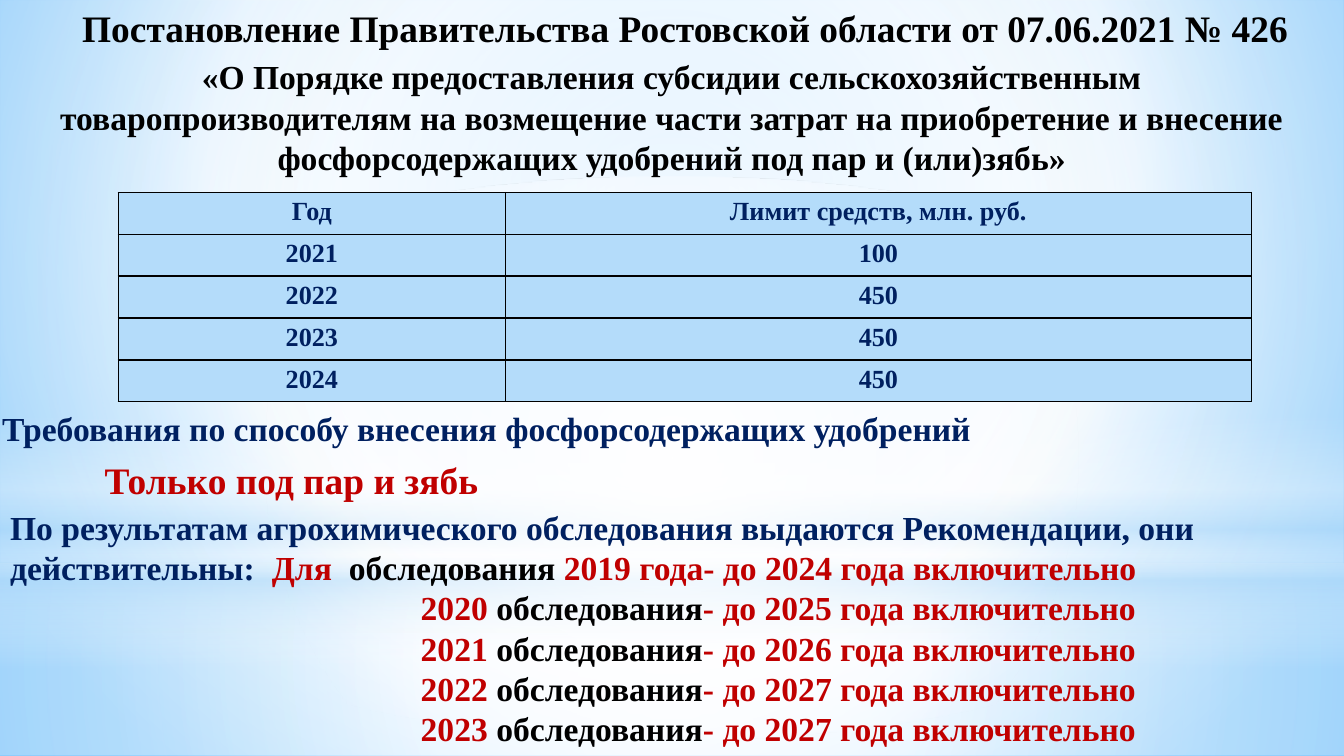
from pptx import Presentation
from pptx.dml.color import RGBColor
from pptx.enum.shapes import MSO_SHAPE as Shape
from pptx.enum.text import MSO_ANCHOR as Anchor, MSO_AUTO_SIZE as AutoSize, PP_ALIGN as Align
from pptx.oxml import parse_xml
from pptx.oxml.ns import nsdecls, qn
from pptx.util import Pt

COLORS = {"black": "000000", "navy": "002060", "red": "C00000", "white": "FFFFFF",
          "pale": "B4DCFA", "sky": "9ED5FF", "blue": "5BB9FF"}
FONT = "Times New Roman"


def paint_gradient(fill, element, stops, focus):
    fill.gradient()
    gradient = element.find(".//" + qn("a:gradFill"))
    stop_xml = "".join(
        f'<a:gs pos="{position * 1000}"><a:srgbClr val="{COLORS[color]}">'
        f'<a:alpha val="{opacity * 1000}"/></a:srgbClr></a:gs>'
        for position, color, opacity in stops)
    direction = '<a:lin ang="5400000" scaled="1"/>'
    if focus:
        left, top, right, bottom = [value * 1000 for value in focus]
        direction = (f'<a:path path="circle"><a:fillToRect l="{left}" t="{top}" '
                     f'r="{right}" b="{bottom}"/></a:path>')
    gradient.getparent().replace(gradient, parse_xml(
        f'<a:gradFill {nsdecls("a")} rotWithShape="1"><a:gsLst>{stop_xml}</a:gsLst>'
        f'{direction}</a:gradFill>'))


def add_runs(paragraph, size, runs, align=Align.LEFT):
    paragraph.alignment = align
    for text, color in runs:
        run = paragraph.add_run()
        run.text = text
        run.font.name = FONT
        run.font.size = Pt(size)
        run.font.bold = True
        run.font.color.rgb = RGBColor.from_string(COLORS[color])


presentation = Presentation()
presentation.slide_width = Pt(720)
presentation.slide_height = Pt(405)
slide = presentation.slides.add_slide(presentation.slide_layouts[5])

paint_gradient(slide.background.fill, slide.element,
               [(0, "sky", 100), (60, "white", 100), (100, "blue", 100)], (20, 10, 20, 60))

center = (50, 50, 50, 50)
panels = [
    (Shape.RECTANGLE, 302, 103, center,
     [(0, "white", 91), (37, "white", 76), (100, "pale", 79)]),
    (Shape.RECTANGLE, 0, 302, center,
     [(0, "white", 89), (48, "white", 62), (100, "pale", 79)]),
    (Shape.RECTANGLE, 222.5, 135, None,
     [(0, "white", 0), (29, "white", 30), (45, "pale", 40),
      (55, "white", 26), (65, "pale", 60), (100, "white", 0)]),
    (Shape.OVAL, 94.5, 301.5, center, [(0, "white", 100), (56, "white", 0)]),
]
for kind, top, height, focus, stops in panels:
    panel = slide.shapes.add_shape(kind, 0, Pt(top), Pt(720), Pt(height))
    panel.shadow.inherit = False
    panel.line.fill.background()
    paint_gradient(panel.fill, panel.element, stops, focus)

title = slide.shapes.title
title.element.getparent().append(title.element)
title.left, title.top, title.width, title.height = Pt(14.4), Pt(0), Pt(705.6), Pt(29.5)
subtitle = slide.shapes.add_textbox(Pt(18.9), Pt(27.4), Pt(682), Pt(70.6))

limits = [("Год", "Лимит средств, млн. руб."), ("2021", "100"), ("2022", "450"),
          ("2023", "450"), ("2024", "450")]
table = slide.shapes.add_table(len(limits), 2, Pt(63.4), Pt(103.2), Pt(607), Pt(112)).table
table.columns[0].width = Pt(207.4)
table.columns[1].width = Pt(399.6)
for row, values in zip(table.rows, limits):
    row.height = Pt(22.4)
    for cell, value in zip(row.cells, values):
        cell.margin_left = cell.margin_right = Pt(7.2)
        cell.margin_top = cell.margin_bottom = Pt(2.7)
        add_runs(cell.text_frame.paragraphs[0], 14, [(value, "navy")], Align.CENTER)
        properties = cell._tc.get_or_add_tcPr()
        for side in ("lnL", "lnR", "lnT", "lnB"):
            properties.append(parse_xml(
                f'<a:{side} {nsdecls("a")} w="12700"><a:solidFill>'
                f'<a:srgbClr val="{COLORS["black"]}"/></a:solidFill></a:{side}>'))
        cell.fill.solid()
        cell.fill.fore_color.rgb = RGBColor.from_string(COLORS["pale"])

requirement = slide.shapes.add_textbox(Pt(-4.3), Pt(216), Pt(535.7), Pt(27.4))
method = slide.shapes.add_textbox(Pt(50.6), Pt(242), Pt(213), Pt(29.5))
validity = slide.shapes.add_textbox(Pt(0), Pt(268.8), Pt(720), Pt(136))

for box in (title, subtitle, requirement, method, validity):
    frame = box.text_frame
    frame.word_wrap = box not in (requirement, method)
    frame.auto_size = AutoSize.NONE
    frame.vertical_anchor = Anchor.TOP
    frame.margin_left = frame.margin_right = Pt(5.4)
    frame.margin_top = frame.margin_bottom = Pt(2.7)

add_runs(title.text_frame.paragraphs[0], 20,
         [("Постановление Правительства Ростовской области от 07.06.2021 № 426", "black")],
         Align.CENTER)
add_runs(subtitle.text_frame.paragraphs[0], 18,
         [("«О Порядке предоставления субсидии сельскохозяйственным товаропроизводителям "
           "на возмещение части затрат на приобретение и внесение фосфорсодержащих "
           "удобрений под пар и (или)зябь»", "black")], Align.CENTER)
add_runs(requirement.text_frame.paragraphs[0], 18,
         [("Требования по способу внесения фосфорсодержащих удобрений", "navy")])
add_runs(method.text_frame.paragraphs[0], 20, [("Только под пар и зябь", "red")])
add_runs(validity.text_frame.paragraphs[0], 18,
         [("По результатам агрохимического обследования выдаются Рекомендации, "
           "они действительны:  ", "navy"),
          ("Для  ", "red"), ("обследования ", "black"),
          ("2019 года- до 2024 года включительно", "red")])
for survey, expiry in [(2020, 2025), (2021, 2026), (2022, 2027), (2023, 2027)]:
    paragraph = validity.text_frame.add_paragraph()
    paragraph._p.get_or_add_pPr().set("marL", str(Pt(220)))
    add_runs(paragraph, 18, [(f"{survey} ", "red"), ("обследования", "black"),
                             (f"- до {expiry} года включительно", "red")])

presentation.save("out.pptx")
